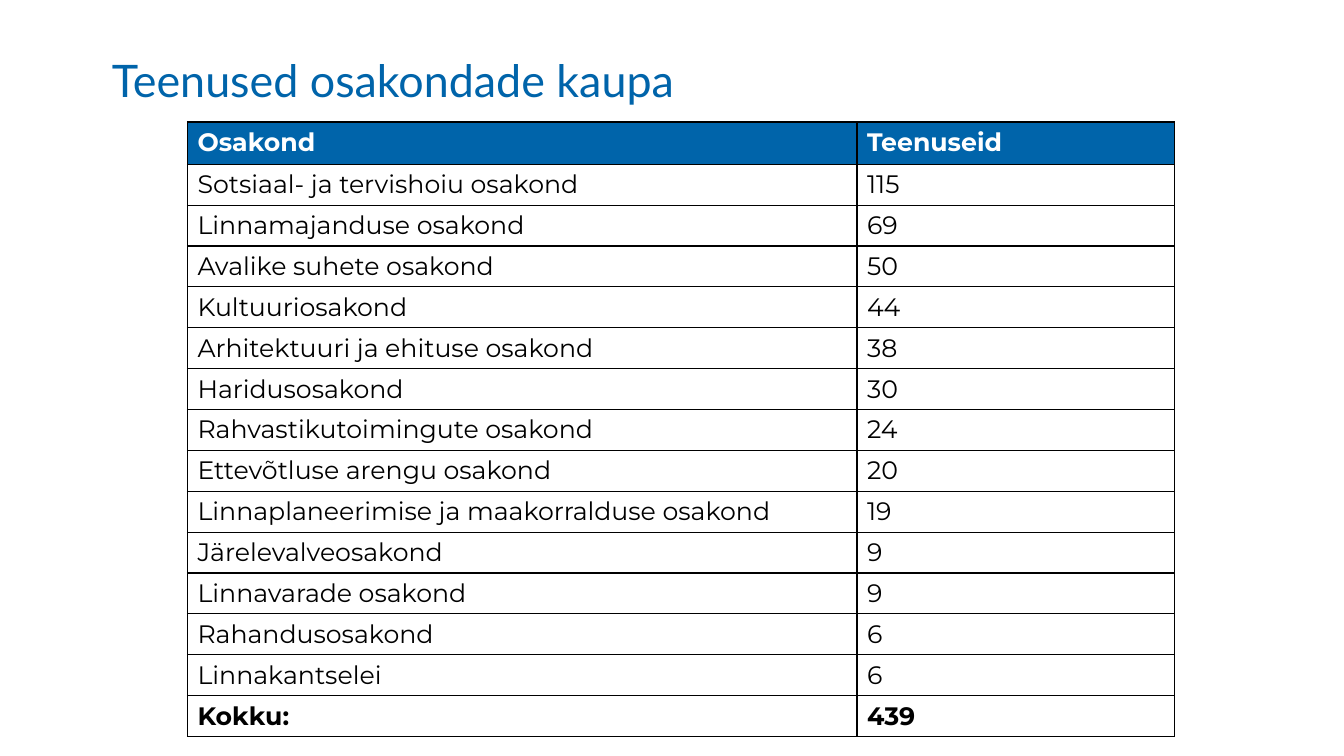
from lxml import etree
from pptx import Presentation
from pptx.dml.color import RGBColor
from pptx.enum import text
from pptx.oxml import ns
from pptx.util import Inches, Pt

# Content
TITLE = "Teenused osakondade kaupa"
HEADER = ("Osakond", "Teenuseid")
SERVICES = [
    ("Sotsiaal- ja tervishoiu osakond", 115),
    ("Linnamajanduse osakond", 69),
    ("Avalike suhete osakond", 50),
    ("Kultuuriosakond", 44),
    ("Arhitektuuri ja ehituse osakond", 38),
    ("Haridusosakond", 30),
    ("Rahvastikutoimingute osakond", 24),
    ("Ettevõtluse arengu osakond", 20),
    ("Linnaplaneerimise ja maakorralduse osakond", 19),
    ("Järelevalveosakond", 9),
    ("Linnavarade osakond", 9),
    ("Rahandusosakond", 6),
    ("Linnakantselei", 6),
]
TOTAL = ("Kokku:", sum(count for _, count in SERVICES))
ROWS = [HEADER, *SERVICES, TOTAL]

# Look
COLORS = {"blue": "0064AA", "white": "FFFFFF", "black": "000000"}
TITLE_FONT = {"name": "Lato", "size": Pt(32), "bold": False}
CELL_FONT = {"name": "Montserrat", "size": Pt(18)}
COLUMN_WIDTHS = (6.64, 3.15)
TABLE_LEFT, TABLE_TOP, TABLE_HEIGHT = 1.86, 1.21, 6.1
HEADER_HEIGHT = 0.42


def write(frame, words, color, **font_values):
    """Put one formatted line of text into a text frame."""
    para = frame.paragraphs[0]
    para.alignment = text.PP_ALIGN.LEFT
    para.line_spacing = 1.0
    span = para.add_run()
    span.text = str(words)
    for name, value in font_values.items():
        setattr(span.font, name, value)
    span.font.color.rgb = RGBColor.from_string(COLORS[color])


def add_borders(cell):
    """Draw a one-point black line on each side of a cell."""
    properties = cell._tc.get_or_add_tcPr()
    for place, side in enumerate(("lnL", "lnR", "lnT", "lnB")):
        line = etree.Element(ns.qn(f"a:{side}"), w=str(Pt(1)))
        fill = etree.SubElement(line, ns.qn("a:solidFill"))
        etree.SubElement(fill, ns.qn("a:srgbClr"), val=COLORS["black"])
        properties.insert(place, line)


def add_title(page):
    title = page.shapes.title
    title.left, title.top = Inches(1.01), Inches(0.47)
    title.width, title.height = Inches(11.5), Inches(1.04)
    frame = title.text_frame
    frame.word_wrap = True
    frame.auto_size = text.MSO_AUTO_SIZE.NONE
    frame.vertical_anchor = text.MSO_ANCHOR.TOP
    write(frame, TITLE, "blue", **TITLE_FONT)


def add_services_table(page):
    table = page.shapes.add_table(
        len(ROWS), len(HEADER), Inches(TABLE_LEFT), Inches(TABLE_TOP),
        Inches(sum(COLUMN_WIDTHS)), Inches(TABLE_HEIGHT)).table
    table.horz_banding = False

    # Column widths and equal rows under the header
    for column, width in zip(table.columns, COLUMN_WIDTHS):
        column.width = Inches(width)
    row_height = (TABLE_HEIGHT - HEADER_HEIGHT) / (len(ROWS) - 1)

    for index, (row, values) in enumerate(zip(table.rows, ROWS)):
        is_header = values is HEADER
        row.height = Inches(HEADER_HEIGHT if is_header else row_height)
        for cell, value in zip(row.cells, values):
            if is_header:
                cell.fill.solid()
                cell.fill.fore_color.rgb = RGBColor.from_string(COLORS["blue"])
            else:
                cell.fill.background()
            add_borders(cell)
            write(cell.text_frame, value, "white" if is_header else "black",
                  bold=index in (0, len(ROWS) - 1), **CELL_FONT)


def main():
    deck = Presentation()
    deck.slide_width, deck.slide_height = Inches(13.33), Inches(7.5)
    page = deck.slides.add_slide(deck.slide_layouts[5])
    add_title(page)
    add_services_table(page)
    deck.save("out.pptx")


if __name__ == "__main__":
    main()
